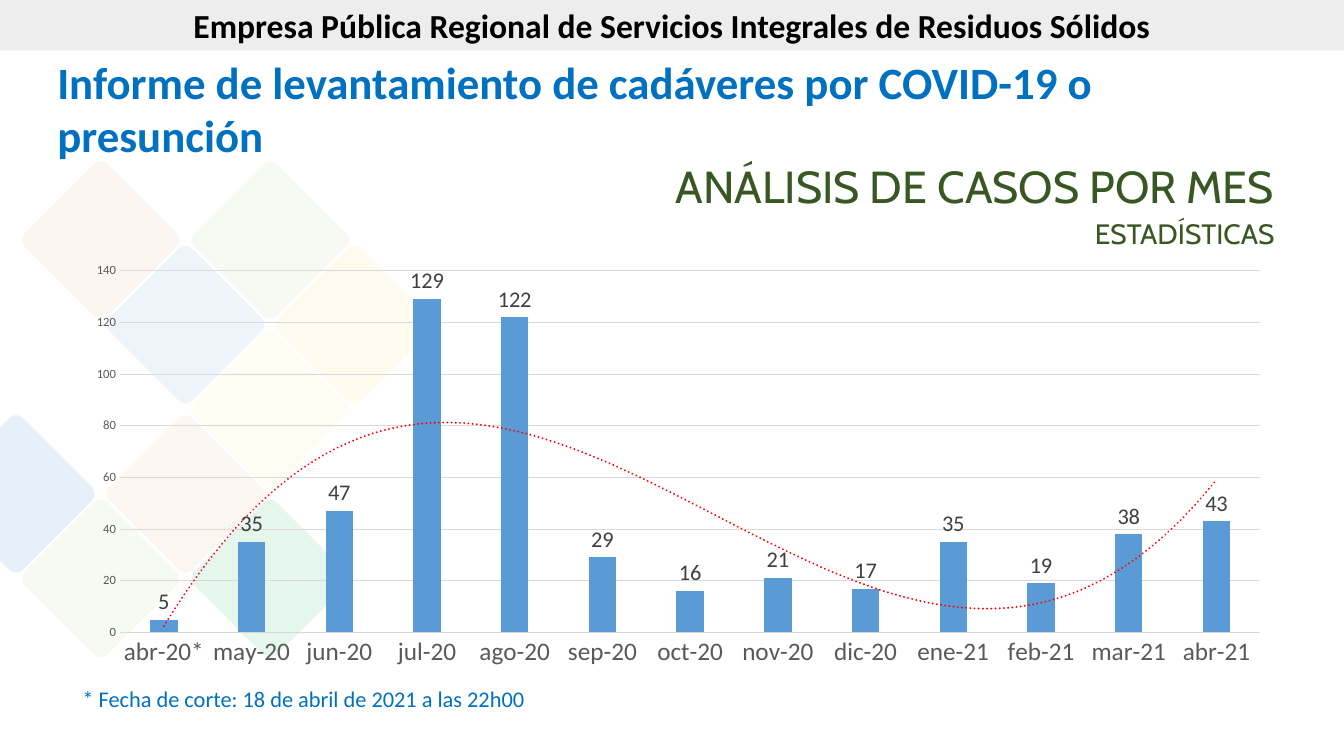
from lxml import etree
from pptx import Presentation
from pptx.chart.data import CategoryChartData
from pptx.dml.color import RGBColor
from pptx.enum.chart import XL_CHART_TYPE as CT, XL_LABEL_POSITION as LP, XL_TICK_MARK as TM
from pptx.enum.shapes import MSO_SHAPE as MS
from pptx.enum.text import MSO_ANCHOR as MA, PP_ALIGN as AL
from pptx.oxml import parse_xml
from pptx.oxml.ns import nsdecls, qn
from pptx.util import Inches, Pt

W, H = 13.33, 7.5
COLORS = {
    "band": "EDEDED", "black": "000000", "blue": "0070C0", "green": "385723",
    "bar": "5B9BD5", "grid": "D9D9D9", "axis": "595959", "label": "404040",
    "trend": "FF0000",
}
# Tiles: lattice column, lattice row, colour, opacity in percent
TILES = [
    (3, 0, "A9D18E", 10), (2, 1, "DAE3F3", 41), (0, 3, "0070C0", 10),
    (3, 2, "FFE699", 10), (2, 3, "F4B183", 10), (3, 4, "00B050", 10),
    (1, 4, "A9D18E", 10), (4, 1, "FFD966", 10), (1, 0, "C45003", 5),
]
CASES = {
    "abr-20*": 5, "may-20": 35, "jun-20": 47, "jul-20": 129, "ago-20": 122,
    "sep-20": 29, "oct-20": 16, "nov-20": 21, "dic-20": 17, "ene-21": 35,
    "feb-21": 19, "mar-21": 38, "abr-21": 43,
}


def rgb(name):
    return RGBColor.from_string(COLORS[name])


def set_font(font, size, color, name="Calibri", bold=False):
    font.size, font.name, font.bold = Pt(size), name, bold
    font.color.rgb = rgb(color)


def add_plain_shape(slide, kind, box, color):
    sp = slide.shapes.add_shape(kind, *map(Inches, box))
    sp.shadow.inherit = False
    sp.fill.solid()
    sp.fill.fore_color.rgb = RGBColor.from_string(color)
    sp.line.fill.background()
    return sp


def add_tiles(slide, left, top, pitch, side):
    for col, row, color, opacity in TILES:
        box = (left + col * pitch, top + row * pitch, side, side)
        sp = add_plain_shape(slide, MS.ROUNDED_RECTANGLE, box, color)
        sp.adjustments[0] = 0.08
        sp.rotation = 315
        clr = sp.fill._xPr.find(qn("a:solidFill"))[0]
        etree.SubElement(clr, qn("a:alpha"), val=str(opacity * 1000))


def add_text(slide, box, text, size, color, name="Calibri", bold=False,
             align=AL.LEFT, spacing=None):
    tf = slide.shapes.add_textbox(*map(Inches, box)).text_frame
    tf.word_wrap = True
    p = tf.paragraphs[0]
    p.text, p.alignment = text, align
    if spacing:
        p.line_spacing = Pt(spacing)
    set_font(p.font, size, color, name, bold)


def add_header(slide, box, text):
    sp = add_plain_shape(slide, MS.RECTANGLE, box, COLORS["band"])
    tf = sp.text_frame
    tf.word_wrap, tf.vertical_anchor = True, MA.MIDDLE
    p = tf.paragraphs[0]
    p.text, p.alignment = text, AL.CENTER
    set_font(p.font, 24, "black", bold=True)


def add_headings(slide, right, top):
    style = dict(color="green", name="Cabin", align=AL.RIGHT, spacing=36.5)
    add_text(slide, (right - 7.73, top, 7.73, 0.61), "ANÁLISIS DE CASOS POR MES", 32, **style)
    add_text(slide, (right - 5.03, top + 0.37, 5.03, 0.55), "ESTADÍSTICAS", 20, **style)


def add_trend(series):
    trend = parse_xml(
        f'<c:trendline {nsdecls("c", "a")}><c:spPr><a:ln w="19050" cap="rnd"><a:solidFill>'
        f'<a:srgbClr val="{COLORS["trend"]}"/></a:solidFill><a:prstDash val="sysDot"/></a:ln>'
        '</c:spPr><c:trendlineType val="poly"/><c:order val="3"/>'
        '<c:dispRSqr val="0"/><c:dispEq val="0"/></c:trendline>')
    series._element.find(qn("c:cat")).addprevious(trend)


def add_cases_chart(slide, box):
    data = CategoryChartData()
    data.categories = list(CASES)
    data.add_series("Casos", list(CASES.values()))
    chart = slide.shapes.add_chart(CT.COLUMN_CLUSTERED, *map(Inches, box), data).chart
    chart.has_legend = chart.has_title = False
    set_font(chart.font, 10, "black")

    # Columns, value labels and cubic trend
    plot = chart.plots[0]
    plot.gap_width, plot.overlap, plot.vary_by_categories = 219, -27, False
    series = plot.series[0]
    series.format.fill.solid()
    series.format.fill.fore_color.rgb = rgb("bar")
    labels = series.data_labels
    labels.show_value, labels.position = True, LP.OUTSIDE_END
    set_font(labels.font, 16, "label")
    add_trend(series)

    # Axes
    cat, val = chart.category_axis, chart.value_axis
    for axis, size in ((cat, 18), (val, 9)):
        axis.major_tick_mark = axis.minor_tick_mark = TM.NONE
        set_font(axis.tick_labels.font, size, "axis")
    val.minimum_scale, val.maximum_scale, val.major_unit = 0, 140, 20
    val.has_major_gridlines = True
    val.format.line.fill.background()
    for line in (cat.format.line, val.major_gridlines.format.line):
        line.color.rgb, line.width = rgb("grid"), Pt(0.75)


def build_slide(prs):
    slide = prs.slides.add_slide(prs.slide_layouts[6])
    left, right = 0.72, 12.74
    # Background tiles
    add_tiles(slide, -0.42, 1.8, 0.84, 1.16)
    # Title, note and headings
    add_text(slide, (0.47, 0.49, 10.71, 1.18),
             "Informe de levantamiento de cadáveres por COVID-19 o presunción",
             32, "blue", bold=True)
    add_text(slide, (left, 6.75, 6.9, 0.37),
             "* Fecha de corte: 18 de abril de 2021 a las 22h00", 16, "blue")
    add_headings(slide, right, 1.55)
    # Monthly cases
    add_cases_chart(slide, (left, 2.53, right - left, 4.17))
    # Top band
    add_header(slide, (0, 0, W, 0.5),
               "Empresa Pública Regional de Servicios Integrales de Residuos Sólidos")


def main():
    prs = Presentation()
    prs.slide_width, prs.slide_height = Inches(W), Inches(H)
    build_slide(prs)
    prs.save("out.pptx")


if __name__ == "__main__":
    main()
